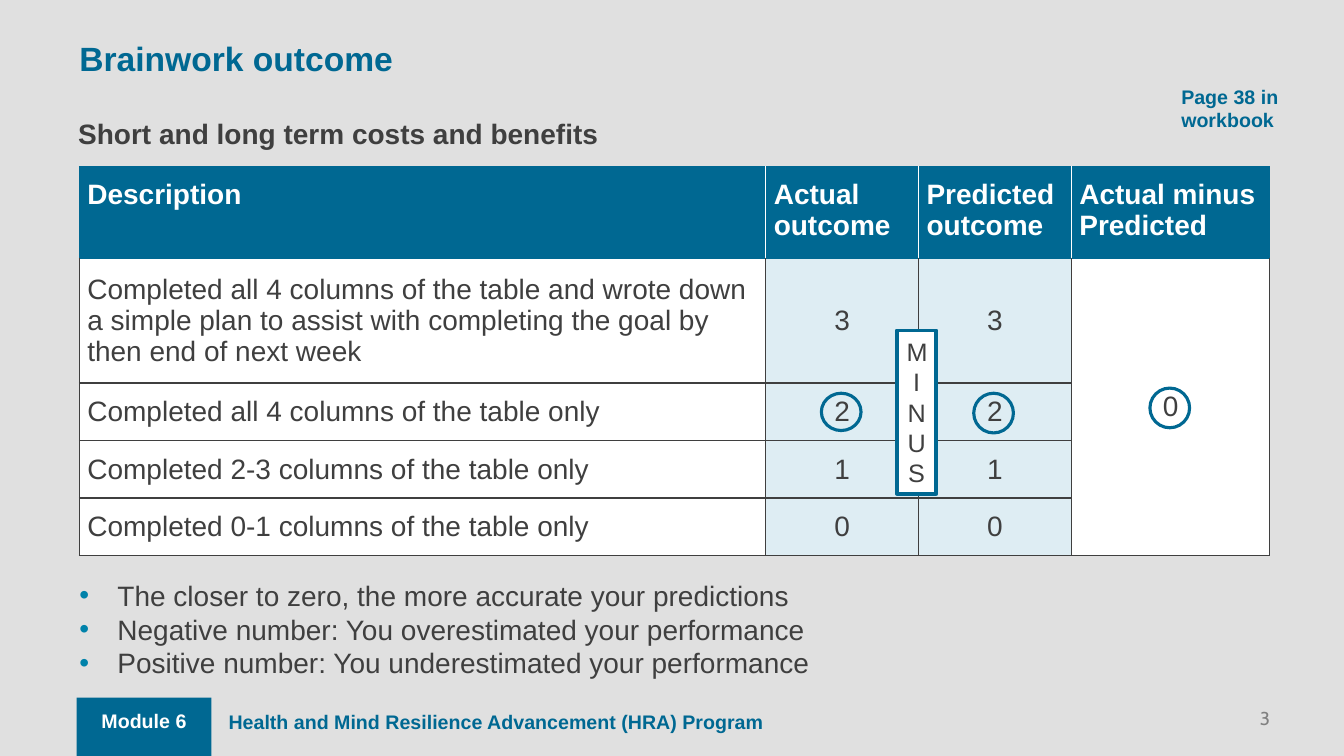
from lxml import etree
from pptx import Presentation
from pptx.dml.color import RGBColor
from pptx.enum import shapes, text
from pptx.oxml import ns
from pptx.util import Cm, Pt

BLUE = RGBColor(0x00, 0x68, 0x92)
TEAL = RGBColor(0x00, 0x82, 0xAA)
PALE = RGBColor(0xDE, 0xED, 0xF3)
DARK = RGBColor(0x3F, 0x3F, 0x3F)
GREY = RGBColor(0x80, 0x80, 0x80)
BACK = RGBColor(0xE0, 0xE0, 0xE0)
WHITE = RGBColor(0xFF, 0xFF, 0xFF)

LEFT = text.PP_ALIGN.LEFT
MID = text.PP_ALIGN.CENTER
RIGHT = text.PP_ALIGN.RIGHT

HEAD = ["Description", "Actual outcome", "Predicted outcome",
        "Actual minus Predicted"]
ROWS = [
    ["Completed all 4 columns of the table and wrote down a simple plan to "
     "assist with completing the goal by then end of next week", "3", "3", "0"],
    ["Completed all 4 columns of the table only", "2", "2", ""],
    ["Completed 2-3 columns of the table only", "1", "1", ""],
    ["Completed 0-1 columns of the table only", "0", "0", ""],
]
WIDTHS = [17.3, 3.85, 3.85, 5.0]
HEIGHTS = [2.3, 3.12, 1.45, 1.45, 1.45]
POINTS = ["The closer to zero, the more accurate your predictions",
          "Negative number: You overestimated your performance",
          "Positive number: You underestimated your performance"]


def write(para, words, size, color, bold=False, align=LEFT, font="Arial"):
    run = para.add_run()
    run.text = words
    run.font.name, run.font.size, run.font.bold = font, Pt(size), bold
    run.font.color.rgb = color
    para.alignment = align


def frame(slide, box, pad=True):
    body = slide.shapes.add_textbox(*map(Cm, box)).text_frame
    body.word_wrap = True
    if not pad:
        body.margin_left = body.margin_right = 0
        body.margin_top = body.margin_bottom = 0
    return body


def label(slide, box, words, size, color, bold=True, pad=True, before=0,
          **look):
    body = frame(slide, box, pad)
    para = body.paragraphs[0]
    para.space_before = Pt(before)
    write(para, words, size, color, bold, **look)
    return body


def block(slide, kind, box, fill=None, line=None, width=2.25):
    shape = slide.shapes.add_shape(kind, *map(Cm, box))
    shape.shadow.inherit = False
    if fill is None:
        shape.fill.background()
    else:
        shape.fill.solid()
        shape.fill.fore_color.rgb = fill
    if line is None:
        shape.line.fill.background()
    else:
        shape.line.color.rgb = line
        shape.line.width = Pt(width)
    return shape


def edge(cell, **sides):
    # Borders go ahead of the fill, in the order left, right, top, bottom
    props = cell._tc.get_or_add_tcPr()
    for spot, side in enumerate("LRTB"):
        line = etree.Element(ns.qn("a:ln" + side), w=str(Pt(1)))
        fill = etree.SubElement(line, ns.qn("a:solidFill"))
        etree.SubElement(fill, ns.qn("a:srgbClr"), val=str(sides[side]))
        props.insert(spot, line)


def header(slide, x, y):
    title = label(slide, (x, y, 22.66, 1.19), "Brainwork outcome", 24, BLUE,
                  pad=False, before=8)
    title.vertical_anchor = text.MSO_ANCHOR.MIDDLE
    label(slide, (x - 0.28, y + 1.96, 17.78, 1.12),
          "Short and long term costs and benefits", 20, DARK)
    label(slide, (x + 27.52, y + 1.15, 3.5, 1.45), "Page 38 in workbook",
          14, BLUE)


def grid(slide, x, y):
    size = map(Cm, (x, y, sum(WIDTHS), sum(HEIGHTS)))
    table = slide.shapes.add_table(5, 4, *size).table
    table.first_row = table.horz_banding = False
    for col, width in zip(table.columns, WIDTHS):
        col.width = Cm(width)
    for row, height in zip(table.rows, HEIGHTS):
        row.height = Cm(height)
    table.cell(1, 3).merge(table.cell(4, 3))
    for r, row in enumerate([HEAD] + ROWS):
        for c, words in enumerate(row):
            cell = table.cell(r, c)
            cell.margin_left = cell.margin_right = Cm(0.2)
            cell.margin_top = cell.margin_bottom = Cm(0.3)
            cell.fill.solid()
            top = r == 0
            inner = c in (1, 2)
            cell.fill.fore_color.rgb = (BLUE if top else
                                        PALE if inner else WHITE)
            if top:
                edge(cell, L=WHITE if c else BLUE, T=BLUE, B=BLUE,
                     R=WHITE if c < 3 else BLUE)
            else:
                cell.vertical_anchor = text.MSO_ANCHOR.MIDDLE
                edge(cell, L=DARK, R=DARK, B=DARK, T=BLUE if r == 1 else DARK)
            if words:
                write(cell.text_frame.paragraphs[0], words, 20,
                      WHITE if top else DARK, top,
                      LEFT if top or c == 0 else MID)


def marks(slide, x, y):
    # Rings around the chosen scores
    for dx, dy, high in ((18.7, 5.7, 0.94), (22.54, 5.7, 1), (26.98, 5.57, 1)):
        block(slide, shapes.MSO_SHAPE.OVAL, (x + dx, y + dy, 1, high),
              line=BLUE)
    # Upright minus sign between the two outcome columns
    sign = block(slide, shapes.MSO_SHAPE.RECTANGLE,
                 (x + 20.6, y + 4.12, 1, 4.11), WHITE, BLUE, 2.75)
    body = sign.text_frame
    body.word_wrap = True
    write(body.paragraphs[0], "MINUS", 18, DARK, align=MID)


def notes(slide, x, y):
    body = frame(slide, (x, y, 30, 3.07), pad=False)
    for i, words in enumerate(POINTS):
        para = body.add_paragraph() if i else body.paragraphs[0]
        para.line_spacing = 1.0
        write(para, words, 20, DARK)
        props = para._p.get_or_add_pPr()
        props.set("marL", str(Cm(0.96)))
        props.set("indent", str(-Cm(0.96)))
        color = etree.SubElement(props, ns.qn("a:buClr"))
        etree.SubElement(color, ns.qn("a:srgbClr"), val=str(TEAL))
        etree.SubElement(props, ns.qn("a:buFont"), typeface="Arial")
        etree.SubElement(props, ns.qn("a:buChar"), char="•")


def footer(slide, x, y):
    block(slide, shapes.MSO_SHAPE.RECTANGLE, (x, y, 3.4, 1.47), BLUE)
    label(slide, (x, y + 0.15, 3.4, 0.86), "Module 6", 14, WHITE,
          before=8, align=MID)
    label(slide, (x + 3.58, y + 0.18, 20, 1.19),
          "Health and Mind Resilience Advancement (HRA) Program", 14, BLUE,
          before=8)
    label(slide, (x + 25, y + 0.23, 5.08, 0.51), "3", 13.3, GREY, bold=False,
          pad=False, align=RIGHT, font="Cabin")


def main():
    deck = Presentation()
    deck.slide_width, deck.slide_height = Cm(33.87), Cm(19.05)
    slide = deck.slides.add_slide(deck.slide_layouts[6])
    slide.background.fill.solid()
    slide.background.fill.fore_color.rgb = BACK
    footer(slide, 1.93, 17.58)
    header(slide, 2, 0.86)
    grid(slide, 2, 4.21)
    marks(slide, 2, 4.21)
    notes(slide, 2, 14.58)
    deck.save("out.pptx")


if __name__ == "__main__":
    main()
